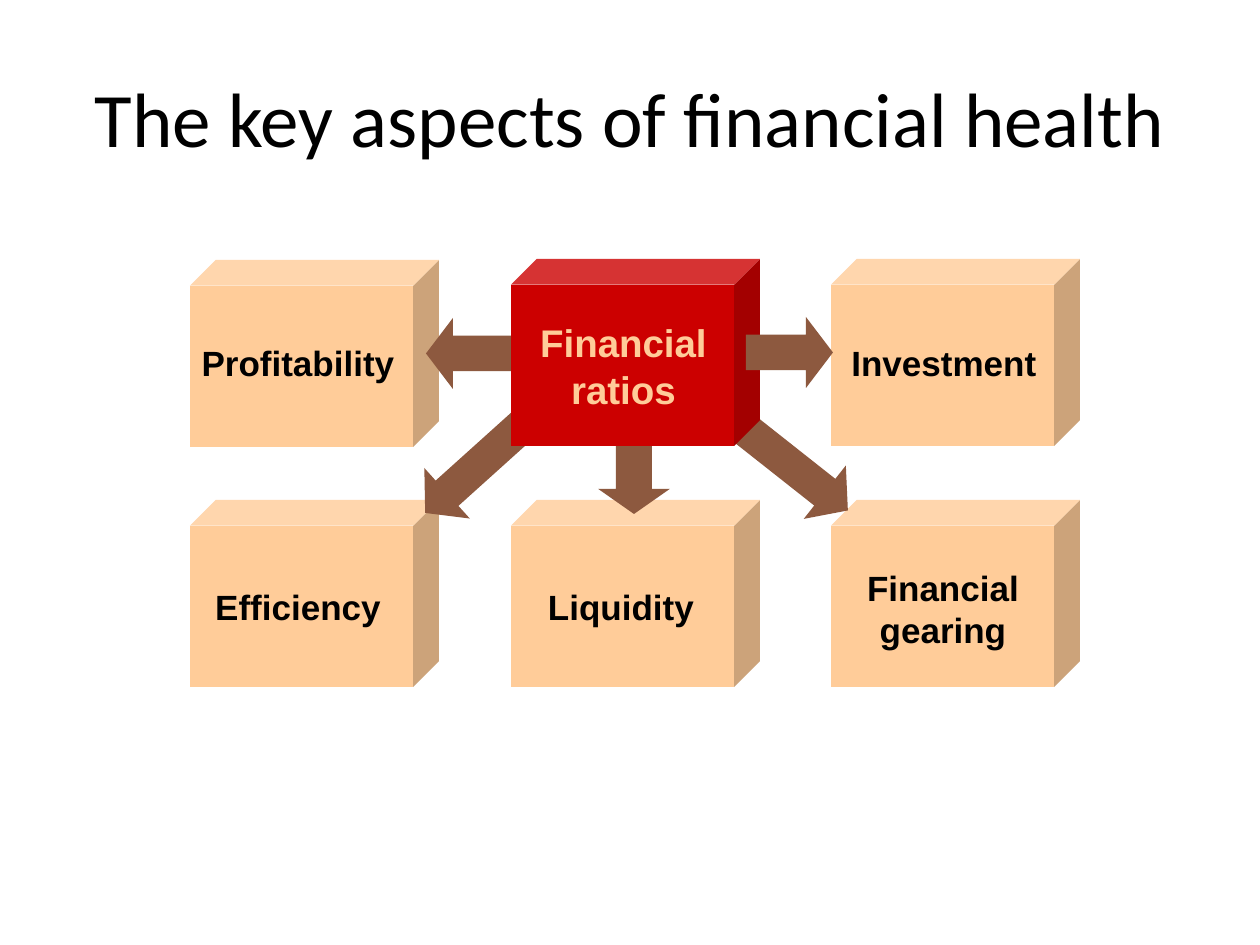
"""Build a slide showing the five aspects of financial health around the financial ratios."""
from pptx import Presentation
from pptx.dml.color import RGBColor
from pptx.enum.shapes import MSO_SHAPE as Shape
from pptx.enum.text import MSO_ANCHOR as Anchor, PP_ALIGN as Align
from pptx.util import Emu, Pt

EMU_PER_PX = 914400 / 126
PEACH, RED, BROWN, BLACK = "FFCC99", "CC0000", "8D593F", "000000"
CUBE_WIDTH, CUBE_HEIGHT = 249, 187
LEFT, CENTRE, RIGHT = 190, 511, 831
TOP, BOTTOM = 259, 500


def px(length):
    return Emu(round(length * EMU_PER_PX))


def color(hex_code):
    return RGBColor.from_string(hex_code)


def add_solid(slide, kind, box, fill, adjustments, rotation=0):
    solid = slide.shapes.add_shape(kind, *map(px, box))
    solid.fill.solid()
    solid.fill.fore_color.rgb = color(fill)
    solid.line.fill.background()
    solid.shadow.inherit = False
    for index, value in enumerate(adjustments):
        solid.adjustments[index] = value
    solid.rotation = rotation


def add_cube(slide, left, top, fill=PEACH):
    add_solid(slide, Shape.CUBE, (left, top, CUBE_WIDTH, CUBE_HEIGHT), fill, [0.138])


def add_arrow(slide, kind, box, head, rotation=0):
    add_solid(slide, kind, box, BROWN, [0.5, head], rotation)


def add_label(slide, text, box, size=20, ink=BLACK, font="Arial", bold=True):
    label = slide.shapes.add_textbox(*map(px, box))
    frame = label.text_frame
    frame.word_wrap = True
    frame.vertical_anchor = Anchor.MIDDLE
    paragraph = frame.paragraphs[0]
    paragraph.text = text
    paragraph.alignment = Align.CENTER
    paragraph.font.name = font
    paragraph.font.size = Pt(size)
    paragraph.font.bold = bold
    paragraph.font.color.rgb = color(ink)


def main():
    deck = Presentation()
    deck.slide_width, deck.slide_height = px(1260), px(945)
    slide = deck.slides.add_slide(deck.slide_layouts[6])

    add_label(slide, "The key aspects of financial health", (63, 38, 1134, 157),
              size=44, font="Calibri", bold=False)

    add_cube(slide, RIGHT, BOTTOM)
    add_cube(slide, LEFT, BOTTOM)
    add_arrow(slide, Shape.DOWN_ARROW, (445, 392, 68, 145), 0.433, 48)
    add_arrow(slide, Shape.DOWN_ARROW, (757, 393, 68, 145), 0.433, 308.3)
    add_cube(slide, LEFT, TOP + 1)
    add_cube(slide, RIGHT, TOP)
    add_arrow(slide, Shape.LEFT_ARROW, (426, 318, 86, 71), 0.38)
    add_cube(slide, CENTRE, BOTTOM)
    add_arrow(slide, Shape.DOWN_ARROW, (598, 444, 72, 70), 0.36)
    add_cube(slide, CENTRE, TOP, RED)
    add_arrow(slide, Shape.RIGHT_ARROW, (746, 317, 87, 71), 0.38)

    add_label(slide, "Profitability", (175, 335, 246, 54))
    add_label(slide, "Investment", (838, 335, 212, 54))
    add_label(slide, "Efficiency", (194, 579, 208, 54))
    add_label(slide, "Liquidity", (490, 579, 262, 54))
    add_label(slide, "Financial gearing", (828, 560, 230, 97))
    add_label(slide, "Financial ratios", (504, 313, 239, 105), size=22, ink=PEACH)

    deck.save("out.pptx")


if __name__ == "__main__":
    main()
